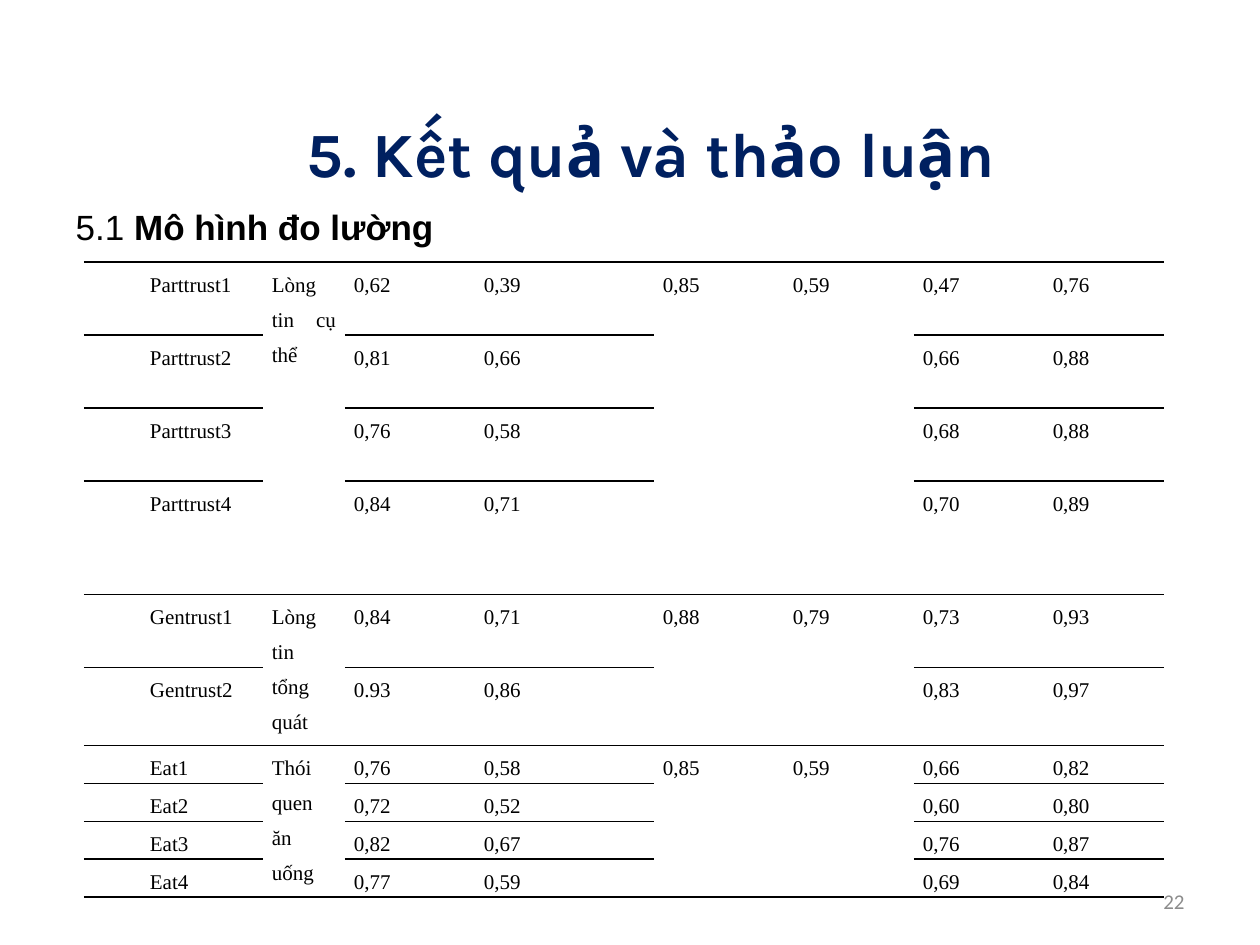
import pptx
import pptx.util
import pptx.dml.color
import pptx.enum.text
import pptx.oxml

PIXEL = 914400 / 126
COLORS = {"title": "002060", "text": "000000", "number": "8C8C8C", "cell": "FFFFFF"}
NAMESPACE = 'xmlns:a="http://schemas.openxmlformats.org/drawingml/2006/main"'
ALIGN = pptx.enum.text.PP_ALIGN
ANCHOR = pptx.enum.text.MSO_ANCHOR


def px(value):
    return pptx.util.Emu(round(value * PIXEL))


def add_run(paragraph, text, font, size, color, bold=False):
    run = paragraph.add_run()
    run.text = text
    run.font.name = font
    run.font.size = pptx.util.Pt(size)
    run.font.bold = bold
    run.font.color.rgb = pptx.dml.color.RGBColor.from_string(COLORS[color])


presentation = pptx.Presentation()
presentation.slide_width = px(1260)
presentation.slide_height = px(945)
slide = presentation.slides.add_slide(presentation.slide_layouts[1])

# Title
title = slide.shapes.title
title.left, title.top, title.width, title.height = px(84), px(105), px(1134), px(94)
title.text_frame.vertical_anchor = ANCHOR.MIDDLE
paragraph = title.text_frame.paragraphs[0]
paragraph.alignment = ALIGN.CENTER
add_run(paragraph, "5. Kết quả và thảo luận", "Karla", 36, "title", True)

# Section heading
body = slide.placeholders[1]
body.left, body.top, body.width, body.height = px(63), px(199), px(1134), px(624)
paragraph = body.text_frame.paragraphs[0]
properties = paragraph._p.get_or_add_pPr()
properties.set("marL", str(px(48)))
properties.set("indent", str(px(-48)))
properties.append(pptx.oxml.parse_xml(f"<a:buNone {NAMESPACE}/>"))
paragraph.space_before = pptx.util.Pt(0)
add_run(paragraph, "5.1 ", "Arial", 20, "text")
add_run(paragraph, "Mô hình đo lường", "Arial", 20, "text", True)

# Slide number
number = slide.shapes.add_textbox(px(903), px(876), px(294), px(50))
number.text_frame.word_wrap = True
number.text_frame.vertical_anchor = ANCHOR.MIDDLE
paragraph = number.text_frame.paragraphs[0]
paragraph.alignment = ALIGN.RIGHT
add_run(paragraph, "22", "Calibri", 12, "number")

# Measurement table: group name, its two reliability values, then its items
groups = [
    ("Lòng tin cụ thể", "0,85", "0,59", [
        ("Parttrust1", "0,62", "0,39", "0,47", "0,76"),
        ("Parttrust2", "0,81", "0,66", "0,66", "0,88"),
        ("Parttrust3", "0,76", "0,58", "0,68", "0,88"),
        ("Parttrust4", "0,84", "0,71", "0,70", "0,89")]),
    ("Lòng tin tổng quát", "0,88", "0,79", [
        ("Gentrust1", "0,84", "0,71", "0,73", "0,93"),
        ("Gentrust2", "0.93", "0,86", "0,83", "0,97")]),
    ("Thói quen ăn uống", "0,85", "0,59", [
        ("Eat1", "0,76", "0,58", "0,66", "0,82"),
        ("Eat2", "0,72", "0,52", "0,60", "0,80"),
        ("Eat3", "0,82", "0,67", "0,76", "0,87"),
        ("Eat4", "0,77", "0,59", "0,69", "0,84")]),
]
column_widths = [57, 122, 82, 130, 179, 130, 130, 130, 120]
row_heights = [73, 73, 73, 105, 73, 73, 37, 37, 37, 37]
ITEM_COLUMNS = (1, 3, 4, 7, 8)
GROUP_COLUMNS = (2, 5, 6)

table = slide.shapes.add_table(
    len(row_heights), len(column_widths), px(84), px(262),
    px(sum(column_widths)), px(sum(row_heights))).table
table.first_row = False
table.horz_banding = False
for column, width in zip(table.columns, column_widths):
    column.width = px(width)
for row, height in zip(table.rows, row_heights):
    row.height = px(height)

# Merge the group cells and collect the wording by position
texts = {}
first = 0
for name, reliability, variance, items in groups:
    last = first + len(items) - 1
    for column, text in zip(GROUP_COLUMNS, (name, reliability, variance)):
        table.cell(first, column).merge(table.cell(last, column))
        texts[first, column] = text
    for row, item in enumerate(items, first):
        for column, text in zip(ITEM_COLUMNS, item):
            texts[row, column] = text
    first = last + 1

# Horizontal rules only, white cells, justified text
line_fill = f'<a:solidFill><a:srgbClr val="{COLORS["text"]}"/></a:solidFill>'
borders = {"lnL": "<a:noFill/>", "lnR": "<a:noFill/>", "lnT": line_fill, "lnB": line_fill}
for row in range(len(row_heights)):
    for column in range(len(column_widths)):
        cell = table.cell(row, column)
        cell.margin_left = cell.margin_right = px(9)
        cell.margin_top = cell.margin_bottom = 0
        properties = cell._tc.get_or_add_tcPr()
        if not cell.is_spanned:
            for side, fill in borders.items():
                properties.append(pptx.oxml.parse_xml(
                    f'<a:{side} {NAMESPACE} w="12700">{fill}</a:{side}>'))
        cell.fill.solid()
        cell.fill.fore_color.rgb = pptx.dml.color.RGBColor.from_string(COLORS["cell"])
        paragraph = cell.text_frame.paragraphs[0]
        if (row, column) in texts:
            paragraph.alignment = ALIGN.JUSTIFY
            paragraph.line_spacing = 1.5
            add_run(paragraph, texts[row, column], "Times New Roman", 12, "text")
        else:
            paragraph._p.append(pptx.oxml.parse_xml(f'<a:endParaRPr {NAMESPACE} sz="1200"/>'))

presentation.save("out.pptx")
